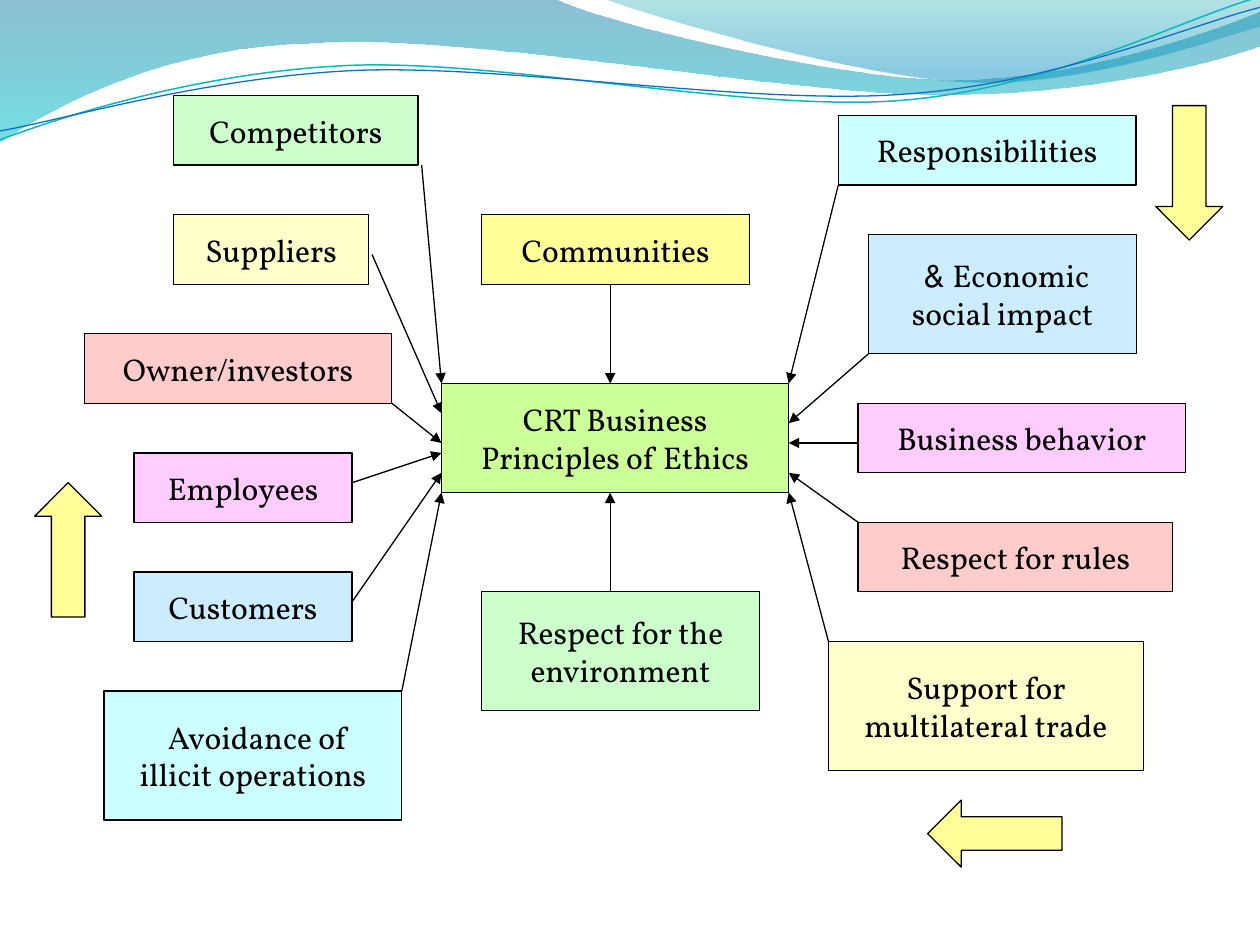
import pptx
import pptx.util
import pptx.dml.color
import pptx.enum.shapes
import pptx.enum.text
import pptx.oxml.ns
import lxml.etree
from dataclasses import dataclass

Cm = pptx.util.Cm
Pt = pptx.util.Pt
qn = pptx.oxml.ns.qn
Preset = pptx.enum.shapes.MSO_SHAPE


@dataclass(frozen=True)
class Theme:
    font: str = "Vollkorn"
    size: float = 18
    outline: float = 0.75
    ink: str = "000000"
    lime: str = "CCFF99"
    aqua: str = "CCFFFF"
    sky: str = "CCECFF"
    pink: str = "FFCCFF"
    rose: str = "FFCCCC"
    cream: str = "FFFFCC"
    mint: str = "CCFFCC"
    yellow: str = "FFFF99"
    teal_line: str = "0AB8BF"
    blue_line: str = "0F6FC6"
    back_wave: tuple = ((0, "0074A1", 45), (1, "00C6CF", 55))
    front_wave: tuple = ((0, "00A1A9", 30), (0.8, "008BBF", 45))


def rgb(code):
    return pptx.dml.color.RGBColor.from_string(code)


class Diagram:
    def __init__(self, slide, theme):
        self.shapes = slide.shapes
        self.theme = theme

    def stroke(self, item, color=None, width=None):
        item.line.color.rgb = rgb(color or self.theme.ink)
        item.line.width = Pt(width or self.theme.outline)

    def curve(self, start, segments, closed):
        builder = self.shapes.build_freeform(Cm(start[0]), Cm(start[1]))
        for segment in segments:
            points = [(Cm(x), Cm(y)) for x, y in zip(segment[::2], segment[1::2])]
            builder.add_line_segments(points, close=False)
        if closed:
            builder.add_line_segments([], close=True)
        outline = builder.convert_to_shape()
        outline.shadow.inherit = False
        steps = iter(list(outline.element.spPr.iter(qn("a:lnTo"))))
        for segment in segments:
            bend = next(steps)
            if len(segment) == 6:
                bend.tag = qn("a:cubicBezTo")
                for extra in (next(steps), next(steps)):
                    bend.append(extra[0])
                    extra.getparent().remove(extra)
        return outline

    def wave(self, start, segments, stops):
        wave = self.curve(start, segments, True)
        wave.line.fill.background()
        wave.fill.gradient()
        wave.fill.gradient_angle = 270
        for stop, (position, color, _) in zip(wave.fill.gradient_stops, stops):
            stop.position = position
            stop.color.rgb = rgb(color)
        for tint, (_, _, opacity) in zip(wave.element.spPr.iter(qn("a:srgbClr")), stops):
            lxml.etree.SubElement(tint, qn("a:alpha"), val=str(opacity * 1000))

    def ribbon(self, start, segments, color, width):
        ribbon = self.curve(start, segments, False)
        ribbon.fill.background()
        self.stroke(ribbon, color, width)

    def preset(self, kind, color, left, top, width, height):
        shape = self.shapes.add_shape(kind, Cm(left), Cm(top), Cm(width), Cm(height))
        shape.shadow.inherit = False
        shape.fill.solid()
        shape.fill.fore_color.rgb = rgb(color)
        self.stroke(shape)
        return shape

    def box(self, lines, color, left, top, width, height=1.4):
        frame = self.preset(Preset.RECTANGLE, color, left, top, width, height).text_frame
        frame.word_wrap = False
        frame.vertical_anchor = pptx.enum.text.MSO_ANCHOR.MIDDLE
        for index, line in enumerate(lines):
            paragraph = frame.add_paragraph() if index else frame.paragraphs[0]
            paragraph.alignment = pptx.enum.text.PP_ALIGN.CENTER
            paragraph._p.get_or_add_pPr().set("rtl", "1")
            run = paragraph.add_run()
            run.text = line
            run.font.name = self.theme.font
            run.font.size = Pt(self.theme.size)
            run.font.color.rgb = rgb(self.theme.ink)

    def block_arrow(self, kind, left, top, width, height):
        arrow = self.preset(kind, self.theme.yellow, left, top, width, height)
        arrow.adjustments[0], arrow.adjustments[1] = 0.5, 0.502

    def link(self, begin, end):
        link = self.shapes.add_connector(
            pptx.enum.shapes.MSO_CONNECTOR.STRAIGHT, *map(Cm, begin + end))
        self.stroke(link)
        lxml.etree.SubElement(link.line._get_or_add_ln(), qn("a:tailEnd"), type="triangle")
        lxml.etree.SubElement(link._element.spPr, qn("a:effectLst"))


def main():
    deck = pptx.Presentation()
    deck.slide_width, deck.slide_height = Cm(25.4), Cm(19.05)
    theme = Theme()
    diagram = Diagram(deck.slides.add_slide(deck.slide_layouts[6]), theme)

    diagram.wave((0, 0), [
        (11.18, -0.03), (12.09, 0.43, 16.87, 1.6, 19.25, 1.6),
        (21.67, 1.6, 24.33, 0.66, 25.4, 0.23), (25.43, 0.91),
        (24.97, 1.12, 22.1, 1.93, 18.95, 1.91), (15.8, 1.91, 9.7, 0.71, 6.53, 0.86),
        (3.28, 0.91, 1.17, 2.11, -0.03, 2.87), (0, 0)], theme.back_wave)
    diagram.wave((12.17, -0.03), [
        (12.93, 0.28, 17.32, 1.57, 19.53, 1.65),
        (21.74, 1.75, 24.41, 0.81, 25.4, 0.53), (25.4, 0), (12.17, -0.03)],
        theme.front_wave)
    diagram.ribbon((0, 2.82), [
        (1.22, 2.36, 4.01, 1.45, 7.04, 1.32), (10.03, 1.19, 15.06, 2.26, 18.11, 2.03),
        (21.16, 1.8, 23.83, 0.38, 25.35, -0.05)], theme.teal_line, 0.85)
    diagram.ribbon((0, 2.64), [
        (1.19, 2.44, 4.17, 1.55, 7.19, 1.42), (10.24, 1.3, 15.16, 2.13, 18.21, 1.9),
        (21.23, 1.7, 23.9, 0.53, 25.4, 0.15)], theme.blue_line, 0.75)

    hub_left, hub_top, hub_width, hub_height = 8.9, 7.73, 7, 2.2
    hub_right, hub_bottom = hub_left + hub_width, hub_top + hub_height
    axis = 12.3
    diagram.box(["CRT Business", "Principles of Ethics"],
                theme.lime, hub_left, hub_top, hub_width, hub_height)
    diagram.box(["Communities"], theme.yellow, 9.71, 4.33, 5.4)
    diagram.link((axis, 5.73), (axis, hub_top))
    diagram.box(["Respect for the", "environment"], theme.mint, 9.71, 11.93, 5.6, 2.4)
    diagram.link((axis, 11.93), (axis, hub_bottom))

    first_top, pitch = 1.93, 2.4
    stakeholders = [
        (["Competitors"], theme.mint, 3.5, 4.93, 1.4, (8.5, 3.33), hub_top),
        (["Suppliers"], theme.cream, 3.5, 3.93, 1.4, (7.5, 5.13), 8.33),
        (["Owner/investors"], theme.rose, 1.7, 6.2, 1.4, (7.9, 8.13), 8.93),
        (["Employees"], theme.pink, 2.7, 4.4, 1.4, (7.1, 9.73), 9.13),
        (["Customers"], theme.sky, 2.7, 4.4, 1.4, (7.1, 12.13), 9.53),
        (["Avoidance of ", "illicit operations"], theme.aqua, 2.1, 6, 2.6,
         (8.1, 13.93), hub_bottom),
    ]
    for row, (lines, color, left, width, height, begin, arrival) in enumerate(stakeholders):
        diagram.box(lines, color, left, first_top + row * pitch, width, height)
        diagram.link(begin, (hub_left, arrival))

    duties = [
        (["Responsibilities"], theme.aqua, 16.9, 2.33, 6, 1.4, 3.73, hub_top),
        (["Economic & ", "social impact"], theme.sky, 17.51, 4.73, 5.4, 2.4, 7.13, 8.53),
        (["Business behavior"], theme.pink, 17.3, 8.13, 6.6, 1.4, 8.93, 8.93),
        (["Respect for rules"], theme.rose, 17.3, 10.53, 6.34, 1.4, 10.53, 9.53),
        (["Support for", "multilateral trade"], theme.cream, 16.7, 12.93, 6.35, 2.6,
         12.93, hub_bottom),
    ]
    for lines, color, left, top, width, height, departure, arrival in duties:
        diagram.box(lines, color, left, top, width, height)
        diagram.link((left, departure), (hub_right, arrival))

    diagram.block_arrow(Preset.DOWN_ARROW, 23.3, 2.13, 1.35, 2.71)
    diagram.block_arrow(Preset.LEFT_ARROW, 18.7, 16.13, 2.71, 1.35)
    diagram.block_arrow(Preset.UP_ARROW, 0.7, 9.73, 1.35, 2.71)

    deck.save("out.pptx")


if __name__ == "__main__":
    main()
